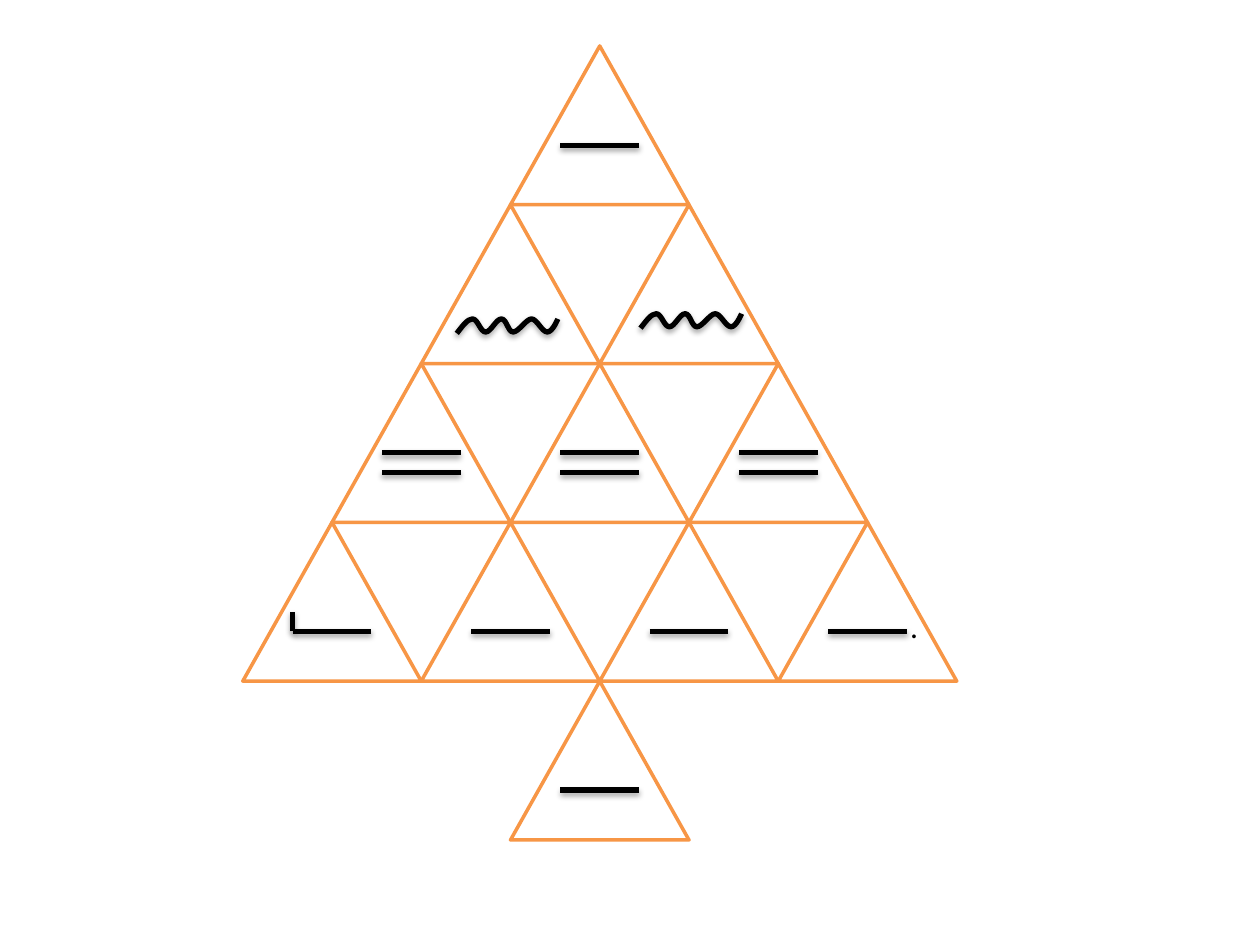
from dataclasses import dataclass
from typing import Any

from lxml.etree import SubElement
from pptx import Presentation
from pptx.dml.color import RGBColor
from pptx.enum.shapes import MSO_CONNECTOR, MSO_SHAPE
from pptx.enum.text import MSO_AUTO_SIZE
from pptx.oxml.ns import qn
from pptx.util import Emu, Pt

PX = 9525  # EMU per px, 96 px to the inch


@dataclass(frozen=True)
class Theme:
    paper: RGBColor = RGBColor(0xFF, 0xFF, 0xFF)
    edge: RGBColor = RGBColor(0xF7, 0x96, 0x46)
    ink: RGBColor = RGBColor(0, 0, 0)
    edge_width: Pt = Pt(2)
    ink_width: Pt = Pt(3)
    font: str = "Calibri"
    size: Pt = Pt(18)


@dataclass(frozen=True)
class Row:
    count: int
    bars: tuple[int, ...]  # bar heights below the top of the row


@dataclass(frozen=True)
class Point:
    x: int
    y: int


THEME = Theme()
CENTER, TOP = 457, 35
HALF, HEIGHT = 68, 121
BAR_HALF, TICK = 30, 15
ROWS = (Row(1, (76,)), Row(2, ()), Row(3, (68, 83)), Row(4, (83,)), Row(1, (83,)))
WAVE = (Point(0, 11), Point(12, 0), Point(22, 10), Point(34, 0),
        Point(43, 10), Point(57, 0), Point(69, 10), Point(77, 0))
WAVE_STARTS = (Point(348, 243), Point(488, 239))
HANDLE, SLOPE = 4, 5


def px(n: int) -> Emu:
    return Emu(n * PX)


def apply(obj: Any, values: dict[str, Any]) -> None:
    for name, value in values.items():
        setattr(obj, name, value)


def ink_line(s: Any) -> None:
    """Black stroke with a soft shadow below it."""
    s.line.color.rgb = THEME.ink
    s.line.width = THEME.ink_width
    sp_pr = s._element.spPr
    effects = sp_pr.find(qn("a:effectLst"))
    if effects is None:
        effects = SubElement(sp_pr, qn("a:effectLst"))
    shadow = SubElement(effects, qn("a:outerShdw"), blurRad="40000", dist="23000",
                        dir="5400000", rotWithShape="0")
    color = SubElement(shadow, qn("a:srgbClr"), val=str(THEME.ink))
    SubElement(color, qn("a:alpha"), val="35000")


def add_triangle(shapes: Any, center: int, top: int) -> None:
    s = shapes.add_shape(MSO_SHAPE.ISOSCELES_TRIANGLE, px(center - HALF), px(top),
                         px(2 * HALF), px(HEIGHT))
    s.shadow.inherit = False
    s.fill.solid()
    s.fill.fore_color.rgb = THEME.paper
    s.line.color.rgb = THEME.edge
    s.line.width = THEME.edge_width


def add_line(shapes: Any, start: Point, end: Point) -> None:
    ink_line(shapes.add_connector(MSO_CONNECTOR.STRAIGHT, px(start.x), px(start.y),
                                  px(end.x), px(end.y)))


def add_wave(shapes: Any, origin: Point) -> None:
    first, *rest = [(px(origin.x + p.x), px(origin.y + p.y)) for p in WAVE]
    builder = shapes.build_freeform(*first)
    builder.add_line_segments(rest, close=False)
    s = builder.convert_to_shape()
    s.shadow.inherit = False
    s.fill.background()
    ink_line(s)
    # Bend each straight segment into a curve with level handles
    segments = list(s._element.iter(qn("a:lnTo")))
    for segment, a, b in zip(segments, WAVE, WAVE[1:]):
        rise = SLOPE if a == WAVE[0] else 0
        reach = 0 if b == WAVE[-1] else HANDLE
        curve = segment.getparent().makeelement(qn("a:cubicBezTo"))
        for p in (Point(a.x + HANDLE, a.y - rise), Point(b.x - reach, b.y), b):
            SubElement(curve, qn("a:pt"), x=str(px(p.x)), y=str(px(p.y)))
        segment.getparent().replace(segment, curve)


def add_full_stop(shapes: Any) -> None:
    s = shapes.add_textbox(px(684), px(458), px(26), px(38))
    tf = s.text_frame
    apply(tf, {"word_wrap": False, "auto_size": MSO_AUTO_SIZE.SHAPE_TO_FIT_TEXT})
    r = tf.paragraphs[0].add_run()
    r.text = "."
    apply(r.font, {"name": THEME.font, "size": THEME.size})
    r.font.color.rgb = THEME.ink


def main() -> None:
    prs = Presentation()
    apply(prs, {"slide_width": px(960), "slide_height": px(720)})
    shapes = prs.slides.add_slide(prs.slide_layouts[6]).shapes

    # Tree and trunk: each row is centred
    cells = [(row, CENTER + (2 * i - row.count + 1) * HALF, TOP + n * HEIGHT)
             for n, row in enumerate(ROWS) for i in range(row.count)]
    for _, center, top in cells:
        add_triangle(shapes, center, top)

    # Bars inside the triangles
    for row, center, top in cells:
        for bar in row.bars:
            add_line(shapes, Point(center - BAR_HALF, top + bar),
                     Point(center + BAR_HALF, top + bar))

    # Upright tick on the first bar of the widest row
    corner = Point(CENTER - 3 * HALF - BAR_HALF, TOP + 3 * HEIGHT + ROWS[3].bars[0])
    add_line(shapes, corner, Point(corner.x, corner.y - TICK))

    # Wavy lines of the second row, and the closing full stop
    for origin in WAVE_STARTS:
        add_wave(shapes, origin)
    add_full_stop(shapes)

    prs.save("out.pptx")


if __name__ == "__main__":
    main()
